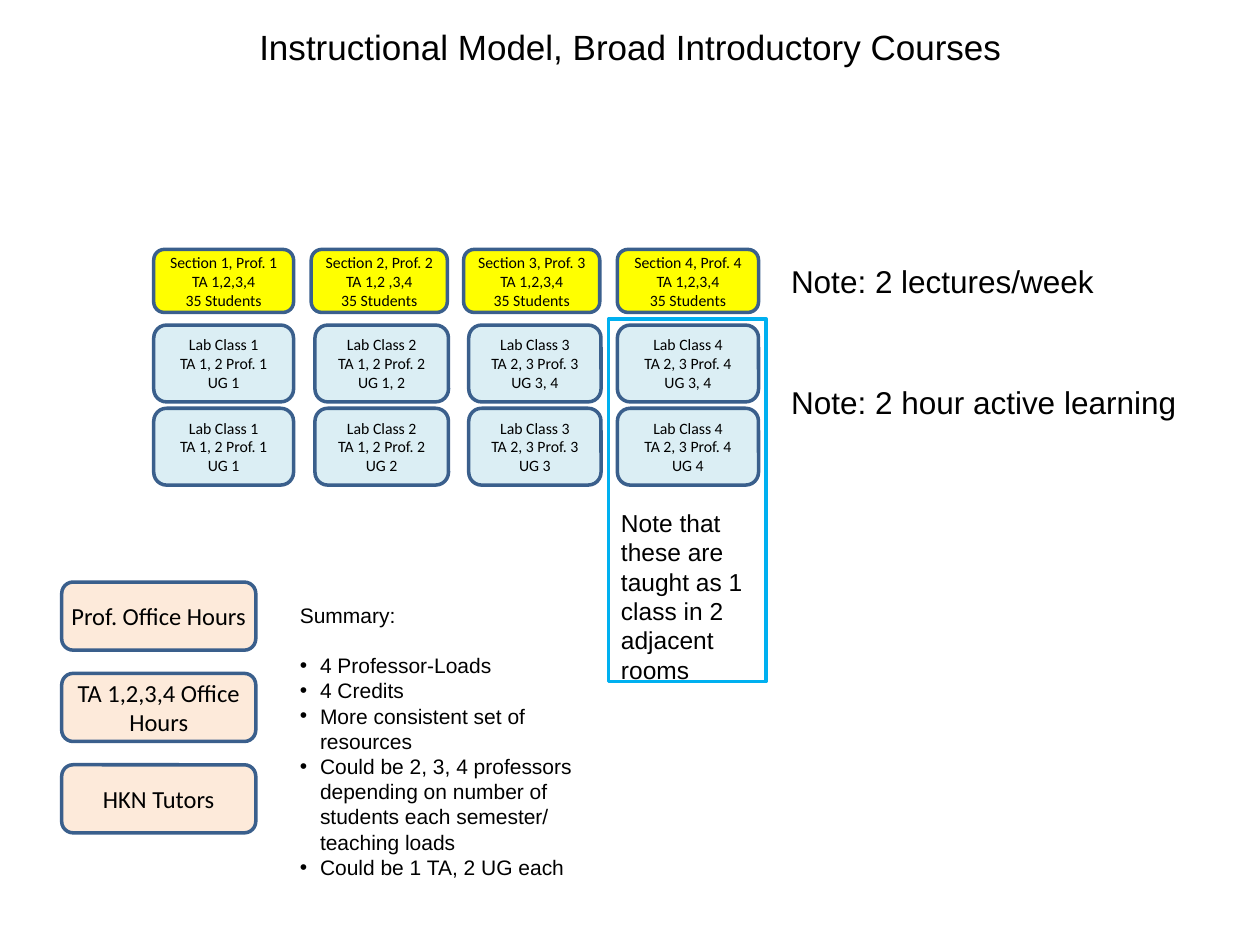
from typing import NamedTuple

from pptx import Presentation
from pptx.dml.color import RGBColor
from pptx.enum.shapes import MSO_SHAPE
from pptx.enum.text import MSO_ANCHOR, MSO_AUTO_SIZE, PP_ALIGN
from pptx.oxml import parse_xml
from pptx.oxml.ns import nsdecls
from pptx.util import Inches, Pt

BLACK = RGBColor(0x00, 0x00, 0x00)
YELLOW = RGBColor(0xFF, 0xFF, 0x00)
PALE_BLUE = RGBColor(0xDB, 0xEE, 0xF4)
PALE_ORANGE = RGBColor(0xFD, 0xEA, 0xDA)
OUTLINE = RGBColor(0x3A, 0x5F, 0x8C)
FRAME_BLUE = RGBColor(0x00, 0xB0, 0xF0)


class Box(NamedTuple):
    left: float
    top: float
    width: float
    height: float


class Course(NamedTuple):
    section_left: float
    section_width: float
    section_tas: str
    lab_left: float
    lab_width: float
    lab_tas: str
    assistants: tuple[str, str]


COURSES = [
    Course(1.22, 1.11, "1,2,3,4", 1.22, 1.11, "1, 2", ("1", "1")),
    Course(2.47, 1.08, "1,2 ,3,4", 2.5, 1.06, "1, 2", ("1, 2", "2")),
    Course(3.68, 1.08, "1,2,3,4", 3.72, 1.05, "2, 3", ("3, 4", "3")),
    Course(4.9, 1.12, "1,2,3,4", 4.9, 1.12, "2, 3", ("3, 4", "4")),
]
SECTION_TOP, SECTION_HEIGHT = 1.98, 0.5
LAB_TOPS, LAB_HEIGHT = (2.58, 3.24), 0.61

SUPPORT = ["Prof. Office Hours", "TA 1,2,3,4 Office Hours", "HKN Tutors"]
SUPPORT_TOP, SUPPORT_STEP = 4.62, 0.725

SUMMARY = [
    "4 Professor-Loads",
    "4 Credits",
    "More consistent set of resources",
    "Could be 2, 3, 4 professors depending on number of students "
    "each semester/ teaching loads",
    "Could be 1 TA, 2 UG each",
]
NOTES = [
    (Box(6.18, 2.03, 2.63, 0.4), "Note: 2 lectures/week"),
    (Box(6.18, 2.99, 3.29, 0.4), "Note: 2 hour active learning"),
]


def inches(box: Box) -> list:
    return [Inches(v) for v in box]


def tighten(tf) -> None:
    tf.margin_left = tf.margin_right = Inches(0.05)
    tf.margin_top = tf.margin_bottom = Inches(0.03)


def write(tf, lines: list[str], size: float, font: str, align=PP_ALIGN.LEFT) -> None:
    for i, line in enumerate(lines):
        p = tf.paragraphs[0] if i == 0 else tf.add_paragraph()
        p.alignment = align
        r = p.add_run()
        r.text = line
        r.font.size = Pt(size)
        r.font.name = font
        r.font.color.rgb = BLACK


def add_card(s, box: Box, fill: RGBColor, lines: list[str], size: float) -> None:
    sp = s.shapes.add_shape(MSO_SHAPE.ROUNDED_RECTANGLE, *inches(box))
    sp.shadow.inherit = False
    sp.fill.solid()
    sp.fill.fore_color.rgb = fill
    sp.line.color.rgb = OUTLINE
    sp.line.width = Pt(2)
    tf = sp.text_frame
    tf.word_wrap = True
    tf.vertical_anchor = MSO_ANCHOR.MIDDLE
    tighten(tf)
    write(tf, lines, size, "Calibri", PP_ALIGN.CENTER)


def add_text(s, box: Box, lines: list[str], size: float, wrap: bool = True):
    tf = s.shapes.add_textbox(*inches(box)).text_frame
    tf.word_wrap = wrap
    tf.auto_size = MSO_AUTO_SIZE.SHAPE_TO_FIT_TEXT
    write(tf, lines, size, "Arial")
    return tf


def add_bullet(p) -> None:
    pPr = p._p.get_or_add_pPr()
    pPr.set("marL", str(Inches(0.16)))
    pPr.set("indent", str(-Inches(0.16)))
    pPr.append(parse_xml(f'<a:buFont {nsdecls("a")} typeface="Arial"/>'))
    pPr.append(parse_xml(f'<a:buChar {nsdecls("a")} char="•"/>'))


def main() -> None:
    prs = Presentation()
    prs.slide_width, prs.slide_height = Inches(10), Inches(7.5)
    s = prs.slides.add_slide(prs.slide_layouts[5])

    # Title
    title = s.shapes.title
    title.left, title.top, title.width, title.height = inches(Box(0.17, 0.17, 9.67, 0.39))
    tighten(title.text_frame)
    write(title.text_frame, ["Instructional Model, Broad Introductory Courses"],
          20, "Arial", PP_ALIGN.CENTER)

    # Sections, each above its two lab classes
    for n, c in enumerate(COURSES, start=1):
        add_card(s, Box(c.section_left, SECTION_TOP, c.section_width, SECTION_HEIGHT), YELLOW,
                 [f"Section {n}, Prof. {n} TA {c.section_tas}", "35 Students"], 9)
        for top, ug in zip(LAB_TOPS, c.assistants):
            add_card(s, Box(c.lab_left, top, c.lab_width, LAB_HEIGHT), PALE_BLUE,
                     [f"Lab Class {n}", f"TA {c.lab_tas} Prof. {n}", f"UG {ug}"], 9)

    # Support outside class
    for i, label in enumerate(SUPPORT):
        add_card(s, Box(0.49, SUPPORT_TOP + i * SUPPORT_STEP, 1.54, 0.54),
                 PALE_ORANGE, [label], 14)

    # Summary list
    tf = add_text(s, Box(2.33, 4.75, 2.42, 2.27), ["Summary:", *SUMMARY], 12)
    tighten(tf)
    tf.paragraphs[0].space_after = Pt(14.4)
    for p in tf.paragraphs[1:]:
        add_bullet(p)

    # Notes beside the rows
    for box, note in NOTES:
        add_text(s, box, [note], 18, wrap=False)

    # Frame and remark on the paired lab classes
    frame = s.shapes.add_shape(MSO_SHAPE.RECTANGLE, *inches(Box(4.83, 2.53, 1.25, 2.88)))
    frame.shadow.inherit = False
    frame.fill.background()
    frame.line.color.rgb = FRAME_BLUE
    frame.line.width = Pt(2)
    add_text(s, Box(4.83, 3.98, 1.25, 1.51),
             ["Note that these are taught as 1 class in 2 adjacent rooms"], 14)

    prs.save("out.pptx")


if __name__ == "__main__":
    main()
